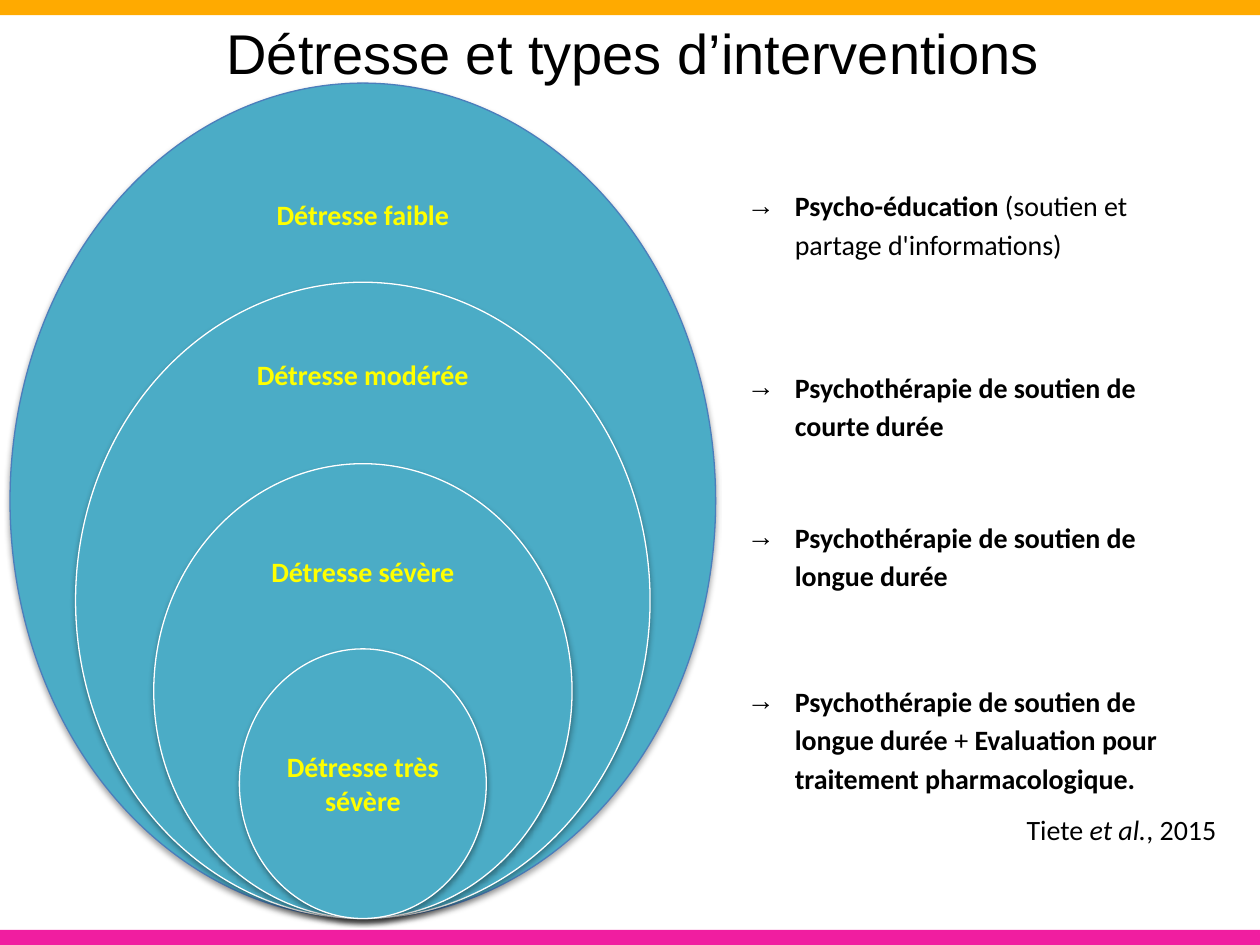
from lxml.etree import SubElement
from pptx import Presentation
from pptx.dml.color import RGBColor
from pptx.enum.shapes import MSO_SHAPE
from pptx.enum.text import MSO_ANCHOR, PP_ALIGN
from pptx.oxml.ns import qn
from pptx.util import Emu, Inches, Pt

AMBER = RGBColor(0xFF, 0xAA, 0x00)
PINK = RGBColor(0xF0, 0x1E, 0xA0)
TEAL = RGBColor(0x4B, 0xAC, 0xC6)
BLUE = RGBColor(0x4B, 0x7E, 0xBC)
WHITE = RGBColor(0xFF, 0xFF, 0xFF)
BLACK = RGBColor(0, 0, 0)
YELLOW = RGBColor(0xFF, 0xFF, 0)

WIDE, HIGH = 10, 7.5
BAR = 0.12
MID, BASE = 2.88, 7.29  # shared centre line and foot of the ovals
COL, SPAN = 5.83, 3.91  # column of interventions
INDENT = Inches(0.38)

# Oval width, height, outline; label, its top, width, height
LEVELS = [
    (5.6, 6.63, BLUE, "Détresse faible", 1.52, 1.69, 0.37),
    (4.56, 5.05, WHITE, "Détresse modérée", 2.79, 1.96, 0.77),
    (3.32, 3.61, WHITE, "Détresse sévère", 4.35, 1.79, 0.77),
    (1.96, 2.14, WHITE, "Détresse très sévère", 5.9, 1.45, 0.64),
]

# Top, height and runs (text, bold)
CARE = [
    (1.41, 0.71, [("Psycho-éducation", True),
                  (" (soutien et partage d'informations)", False)]),
    (2.85, 0.71, [("Psychothérapie de soutien de courte durée", True)]),
    (4.04, 1.17, [("Psychothérapie de soutien de longue durée", True)]),
    (5.34, 1.42, [("Psychothérapie de soutien de longue durée ", True),
                  ("+ ", False),
                  ("Evaluation pour traitement pharmacologique.", True)]),
]


def box(*sides):
    return [Inches(side) for side in sides]


def set_font(para, size, color, name="Calibri"):
    font = para.font
    font.name, font.size, font.color.rgb = name, Pt(size), color
    return font


def add_shape(slide, kind, place, fill, line=None):
    shape = slide.shapes.add_shape(kind, *box(*place))
    shape.fill.solid()
    shape.fill.fore_color.rgb = fill
    if line is None:
        shape.line.fill.background()
    else:
        shape.line.color.rgb = line
        shape.line.width = Pt(0.75)
    shape.shadow.inherit = False
    return shape


def add_text(slide, *place):
    frame = slide.shapes.add_textbox(*box(*place)).text_frame
    frame.word_wrap = True
    return frame.paragraphs[0]


def add_glow(shape):
    """Give the shape a soft shadow straight below it."""
    effects = shape._element.spPr.find(qn("a:effectLst"))
    shade = SubElement(effects, qn("a:outerShdw"), blurRad=str(Pt(3.1)),
                       dist=str(Pt(1.8)), dir="5400000", rotWithShape="0")
    color = SubElement(shade, qn("a:srgbClr"), val="000000")
    SubElement(color, qn("a:alpha"), val="35000")


def add_arrow(para):
    """Use an arrow as the bullet, with a hanging indent."""
    props = para._p.get_or_add_pPr()
    props.set("marL", str(INDENT))
    props.set("indent", str(Emu(-INDENT)))
    SubElement(props, qn("a:buFont"), typeface="Arial")
    SubElement(props, qn("a:buChar"), char="→")


def add_title(slide, text):
    title = slide.shapes.title
    title.left, title.top, title.width, title.height = box(1.54, 0.1, 6.97, 0.64)
    frame = title.text_frame
    frame.text = text
    frame.vertical_anchor = MSO_ANCHOR.TOP
    para = frame.paragraphs[0]
    para.alignment = PP_ALIGN.CENTER
    set_font(para, 32, BLACK, "Arial")


def add_level(slide, wide, high, line, text, top, span, tall):
    oval = add_shape(slide, MSO_SHAPE.OVAL,
                     (MID - wide / 2, BASE - high, wide, high), TEAL, line)
    add_glow(oval)
    label = add_shape(slide, MSO_SHAPE.RECTANGLE,
                      (MID - span / 2, top, span, tall), TEAL)
    frame = label.text_frame
    frame.text = text
    frame.word_wrap = True
    frame.vertical_anchor = MSO_ANCHOR.TOP
    para = frame.paragraphs[0]
    para.alignment = PP_ALIGN.CENTER
    set_font(para, 16, YELLOW).bold = True


def add_care(slide, top, high, runs):
    para = add_text(slide, COL, top, SPAN, high)
    para.line_spacing = 1.15
    add_arrow(para)
    set_font(para, 16, BLACK)
    for text, bold in runs:
        run = para.add_run()
        run.text, run.font.bold = text, bold


def add_source(slide):
    para = add_text(slide, 8.05, 6.4, 1.9, 0.37)
    set_font(para, 16, BLACK)
    for text, slant in (("Tiete ", False), ("et al.", True), (", 2015", False)):
        run = para.add_run()
        run.text, run.font.italic = text, slant


def main():
    deck = Presentation()
    deck.slide_width, deck.slide_height = box(WIDE, HIGH)
    slide = deck.slides.add_slide(deck.slide_layouts[5])

    # Bars along the top and bottom edges
    for top, color in ((0, AMBER), (HIGH - BAR, PINK)):
        add_shape(slide, MSO_SHAPE.RECTANGLE, (0, top, WIDE, BAR), color)
    add_title(slide, "Détresse et types d’interventions")

    # Interventions on the right, nested ovals on the left
    for item in CARE:
        add_care(slide, *item)
    for level in LEVELS:
        add_level(slide, *level)
    add_source(slide)
    deck.save("out.pptx")


if __name__ == "__main__":
    main()
